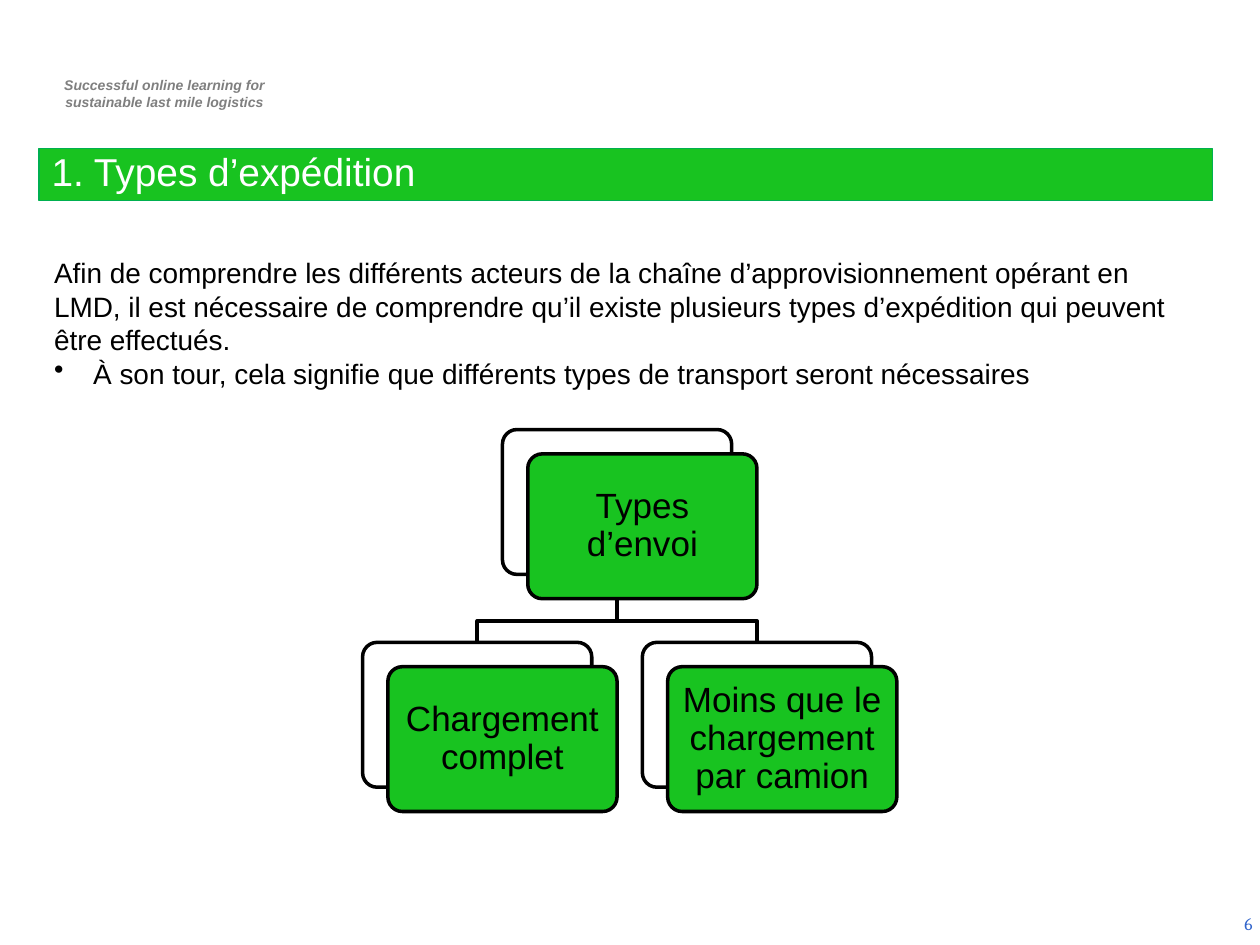
from dataclasses import dataclass

from lxml.etree import SubElement
from pptx import Presentation
from pptx.dml.color import RGBColor
from pptx.enum.shapes import MSO_SHAPE
from pptx.enum.text import MSO_ANCHOR, PP_ALIGN
from pptx.oxml.ns import qn
from pptx.util import Cm, Pt


@dataclass(frozen=True)
class Theme:
    font: str = "Arial"
    number_font: str = "Cambria"
    green: RGBColor = RGBColor(0x18, 0xC3, 0x20)
    bar_edge: RGBColor = RGBColor(0x00, 0xB0, 0x50)
    black: RGBColor = RGBColor(0, 0, 0)
    white: RGBColor = RGBColor(255, 255, 255)
    gray: RGBColor = RGBColor(0x7F, 0x7F, 0x7F)
    blue: RGBColor = RGBColor(0x33, 0x66, 0xCC)
    tagline_size: float = 8
    number_size: float = 10
    body_size: float = 16
    card_size: float = 20
    title_size: float = 22.2


THEME = Theme()

# Hierarchy geometry, in centimetres
CARD_W, CARD_H = 4.62, 2.92
FRONT_DX, FRONT_DY = 0.51, 0.49
ROOT_X, ROOT_Y = 10.13, 8.66
CHILD_Y = 12.95
CHILD_SHIFT = 2.82
ELBOW_Y = 12.52


def style(paragraph, size, color, font=THEME.font, align=PP_ALIGN.LEFT):
    paragraph.alignment = align
    paragraph.font.name = font
    paragraph.font.size = Pt(size)
    paragraph.font.color.rgb = color


def add_text(slide, x, y, w, h, lines, size, color, **options):
    frame = slide.shapes.add_textbox(Cm(x), Cm(y), Cm(w), Cm(h)).text_frame
    frame.word_wrap = True
    frame.text = "\n".join(lines)
    for paragraph in frame.paragraphs:
        style(paragraph, size, color, **options)
    return frame


def add_bullet(paragraph, indent):
    properties = paragraph._p.get_or_add_pPr()
    properties.set("marL", str(Cm(indent)))
    properties.set("indent", str(-Cm(indent)))
    bullet = SubElement(properties, qn("a:buChar"))
    bullet.set("char", "•")


def add_box(slide, preset, x, y, w, h, fill, edge, edge_width):
    box = slide.shapes.add_shape(preset, Cm(x), Cm(y), Cm(w), Cm(h))
    box.shadow.inherit = False
    box.fill.solid()
    box.fill.fore_color.rgb = fill
    box.line.color.rgb = edge
    box.line.width = Pt(edge_width)
    return box


def add_title_bar(slide, title):
    bar = add_box(slide, MSO_SHAPE.RECTANGLE, 0.79, 3, 23.65, 1.04,
                  THEME.green, THEME.bar_edge, 0.75)
    frame = bar.text_frame
    frame.vertical_anchor = MSO_ANCHOR.BOTTOM
    frame.text = title
    frame.paragraphs[0].line_spacing = 0.8
    style(frame.paragraphs[0], THEME.title_size, THEME.white)


def add_card(slide, x, y, label):
    """A white card with a labelled green card in front of it."""
    layers = ((0, 0, THEME.white), (FRONT_DX, FRONT_DY, THEME.green))
    for dx, dy, fill in layers:
        card = add_box(slide, MSO_SHAPE.ROUNDED_RECTANGLE, x + dx, y + dy,
                       CARD_W, CARD_H, fill, THEME.black, 2)
        card.adjustments[0] = 0.1
    frame = card.text_frame
    frame.margin_left = frame.margin_right = Cm(0.18)
    frame.margin_top = frame.margin_bottom = Cm(0.18)
    frame.vertical_anchor = MSO_ANCHOR.MIDDLE
    frame.text = label
    frame.paragraphs[0].line_spacing = 0.9
    style(frame.paragraphs[0], THEME.card_size, THEME.black,
          align=PP_ALIGN.CENTER)


def add_branch(slide, child_x):
    """An elbow line from the root card down to a child card."""
    root_mid, child_mid = ROOT_X + CARD_W / 2, child_x + CARD_W / 2
    builder = slide.shapes.build_freeform(Cm(root_mid), Cm(ROOT_Y + CARD_H))
    turns = ((root_mid, ELBOW_Y), (child_mid, ELBOW_Y), (child_mid, CHILD_Y))
    builder.add_line_segments([(Cm(x), Cm(y)) for x, y in turns], close=False)
    branch = builder.convert_to_shape()
    branch.shadow.inherit = False
    branch.fill.background()
    branch.line.color.rgb = THEME.black
    branch.line.width = Pt(2)


def add_hierarchy(slide, root, children):
    # Branches lie behind the cards
    placed = [(ROOT_X + side * CHILD_SHIFT, label)
              for side, label in zip((-1, 1), children)]
    for x, _ in placed:
        add_branch(slide, x)
    add_card(slide, ROOT_X, ROOT_Y, root)
    for x, label in placed:
        add_card(slide, x, CHILD_Y, label)


def main():
    prs = Presentation()
    prs.slide_width, prs.slide_height = Cm(25.4), Cm(19.05)
    slide = prs.slides.add_slide(prs.slide_layouts[6])

    # Tagline
    tagline = add_text(
        slide, 0.74, 1.42, 5.16, 0.94,
        ["Successful online learning for", "sustainable last mile logistics"],
        THEME.tagline_size, THEME.gray, align=PP_ALIGN.CENTER)
    for paragraph in tagline.paragraphs:
        paragraph.font.bold = paragraph.font.italic = True

    # Slide number
    number = add_text(slide, 19.58, 18.11, 5.92, 1.02, ["6"],
                      THEME.number_size, THEME.blue,
                      font=THEME.number_font, align=PP_ALIGN.RIGHT)
    number.vertical_anchor = MSO_ANCHOR.MIDDLE

    # Title and introduction
    add_title_bar(slide, "1. Types d’expédition")
    intro = add_text(
        slide, 0.84, 5.03, 23.24, 3.2,
        ["Afin de comprendre les différents acteurs de la chaîne "
         "d’approvisionnement opérant en LMD, il est nécessaire de comprendre "
         "qu’il existe plusieurs types d’expédition qui peuvent être effectués.",
         "À son tour, cela signifie que différents types de transport seront "
         "nécessaires"],
        THEME.body_size, THEME.black)
    add_bullet(intro.paragraphs[1], 0.79)

    # Shipment types
    add_hierarchy(slide, "Types d’envoi",
                  ["Chargement complet", "Moins que le chargement par camion"])

    prs.save("out.pptx")


if __name__ == "__main__":
    main()
